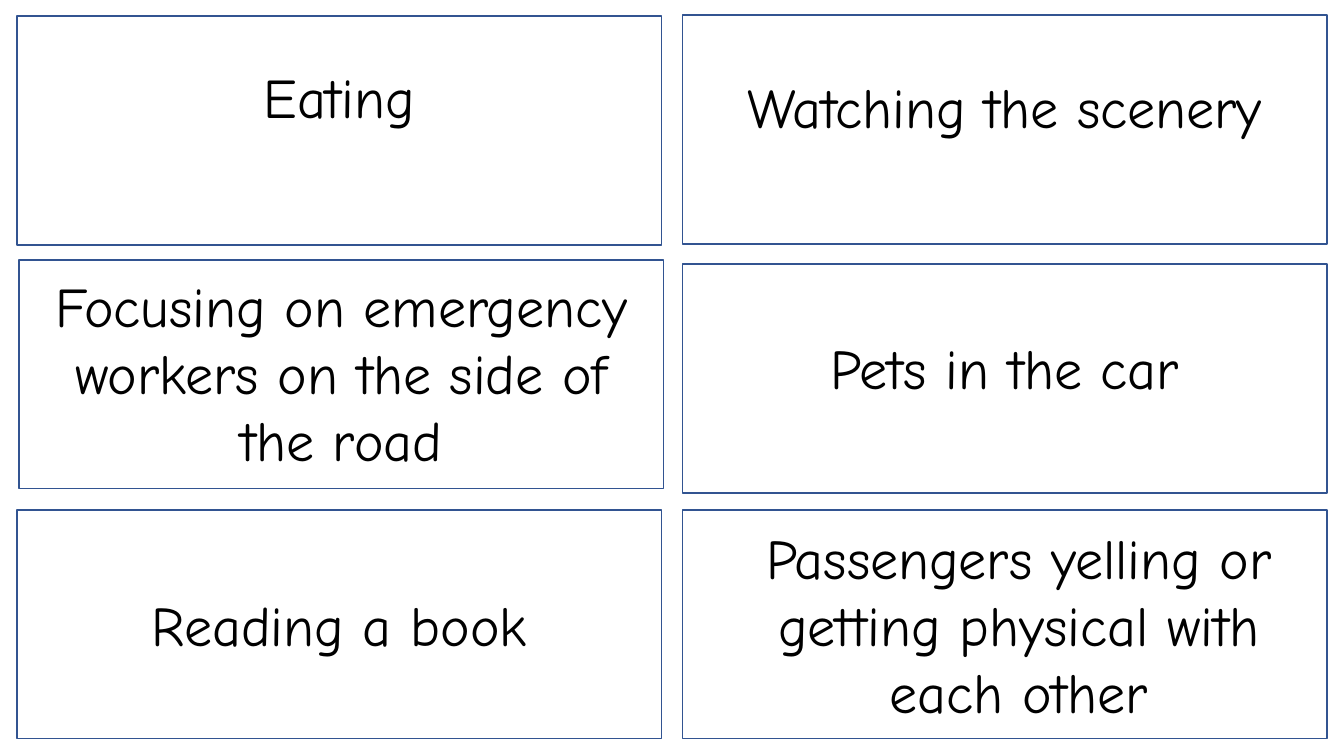
from pptx import Presentation
from pptx.dml.color import RGBColor
from pptx.enum.shapes import MSO_SHAPE
from pptx.enum.text import MSO_AUTO_SIZE, PP_ALIGN
from pptx.util import Inches, Pt

WHITE = RGBColor(0xFF, 0xFF, 0xFF)
BLACK = RGBColor(0, 0, 0)
BLUE = RGBColor(0x32, 0x54, 0x91)
FONT = "Comic Neue"
CARD_W, CARD_H = 6.39, 2.27
TEXT_W = 6.09
ONE_LINE, THREE_LINES = 0.77, 2.12

# Each card: left, top, text inset from left and top, text height, wording.
CARDS = [
    (0.17, 0.16, 0.15, 0.41, ONE_LINE, "Eating"),
    (6.77, 0.15, 0.15, 0.52, ONE_LINE, "Watching the scenery"),
    (0.19, 2.58, 0.15, 0.06, THREE_LINES,
     "Focusing on emergency workers on the side of the road"),
    (6.77, 2.62, 0.15, 0.64, ONE_LINE, "Pets in the car"),
    (0.17, 5.06, 0.15, 0.75, ONE_LINE, "Reading a book"),
    (6.77, 5.06, 0.29, 0.08, THREE_LINES,
     "Passengers yelling or getting physical with each other"),
]


def add_frame(slide, left, top):
    """Draw the outlined rectangle of a card."""
    frame = slide.shapes.add_shape(
        MSO_SHAPE.RECTANGLE, Inches(left), Inches(top),
        Inches(CARD_W), Inches(CARD_H))
    frame.shadow.inherit = False
    frame.fill.solid()
    frame.fill.fore_color.rgb = WHITE
    frame.line.color.rgb = BLUE
    frame.line.width = Pt(1)


def add_label(slide, left, top, height, words):
    """Write the centred wording of a card."""
    box = slide.shapes.add_textbox(
        Inches(left), Inches(top), Inches(TEXT_W), Inches(height))
    frame = box.text_frame
    frame.word_wrap = True
    frame.auto_size = MSO_AUTO_SIZE.SHAPE_TO_FIT_TEXT
    para = frame.paragraphs[0]
    para.alignment = PP_ALIGN.CENTER
    run = para.add_run()
    run.text = words
    run.font.name = FONT
    run.font.size = Pt(40)
    run.font.color.rgb = BLACK


def add_card(slide, left, top, inset, drop, height, words):
    """Place a frame and its label relative to the card corner."""
    add_frame(slide, left, top)
    add_label(slide, left + inset, top + drop, height, words)


def main():
    """Build the slide of cards and save it."""
    deck = Presentation()
    deck.slide_width = Inches(13.33)
    deck.slide_height = Inches(7.5)
    slide = deck.slides.add_slide(deck.slide_layouts[6])
    for card in CARDS:
        add_card(slide, *card)
    deck.save("out.pptx")


if __name__ == "__main__":
    main()
